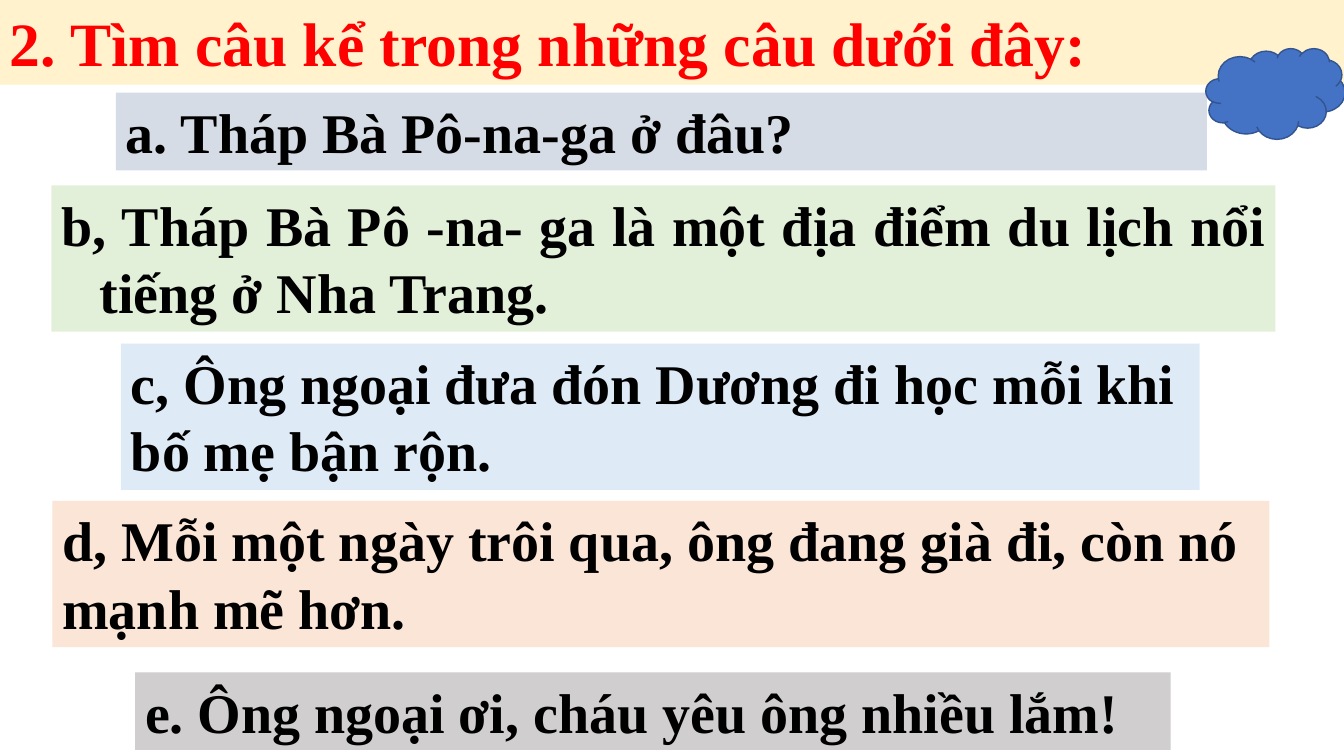
from pptx import Presentation
from pptx.dml.color import RGBColor
from pptx.enum.shapes import MSO_SHAPE
from pptx.enum.text import MSO_AUTO_SIZE, PP_ALIGN
from pptx.util import Inches, Pt

BLACK = RGBColor(0x00, 0x00, 0x00)
RED = RGBColor(0xFF, 0x00, 0x00)
CREAM = RGBColor(0xFF, 0xF2, 0xCC)
BLUE_GREY = RGBColor(0xD6, 0xDC, 0xE5)
PALE_GREEN = RGBColor(0xE2, 0xF0, 0xD9)
PALE_BLUE = RGBColor(0xDE, 0xEB, 0xF7)
PEACH = RGBColor(0xFB, 0xE5, 0xD6)
GREY = RGBColor(0xD0, 0xCE, 0xCE)
CLOUD_BLUE = RGBColor(0x44, 0x72, 0xC4)
CLOUD_EDGE = RGBColor(0x32, 0x54, 0x91)


class ExerciseSlide:
    font_name = "Times New Roman"
    hanging_indent = Inches(0.38)

    def __init__(self, slide):
        self.slide = slide

    def banner(self, text, box, fill, hanging=True, size=40, color=BLACK):
        """Add a filled band of bold text, justified when it hangs."""
        band = self.slide.shapes.add_textbox(*map(Inches, box))
        band.fill.solid()
        band.fill.fore_color.rgb = fill
        frame = band.text_frame
        frame.word_wrap = True
        frame.auto_size = MSO_AUTO_SIZE.SHAPE_TO_FIT_TEXT
        frame.text = text
        paragraph = frame.paragraphs[0]
        if hanging:
            paragraph.alignment = PP_ALIGN.JUSTIFY
            properties = paragraph._p.get_or_add_pPr()
            properties.set("marL", str(self.hanging_indent))
            properties.set("indent", str(-self.hanging_indent))
        font = paragraph.runs[0].font
        font.name = self.font_name
        font.size = Pt(size)
        font.bold = True
        font.color.rgb = color

    def cloud(self, box):
        cloud = self.slide.shapes.add_shape(MSO_SHAPE.CLOUD, *map(Inches, box))
        cloud.shadow.inherit = False
        cloud.fill.solid()
        cloud.fill.fore_color.rgb = CLOUD_BLUE
        cloud.line.color.rgb = CLOUD_EDGE
        cloud.line.width = Pt(1)


def main():
    prs = Presentation()
    prs.slide_width, prs.slide_height = Inches(13.33), Inches(7.5)
    exercise = ExerciseSlide(prs.slides.add_slide(prs.slide_layouts[6]))

    # Question
    exercise.banner("2. Tìm câu kể trong những câu dưới đây:",
                    (0, 0, 13.33, 0.84), CREAM, size=44, color=RED)

    # Sentences to choose from: text, box, fill, hanging indent
    sentences = [
        ("a. Tháp Bà Pô-na-ga ở đâu?",
         (1.15, 0.92, 10.82, 0.77), BLUE_GREY, True),
        ("b, Tháp Bà Pô -na- ga là một địa điểm du lịch nổi tiếng ở Nha Trang.",
         (0.51, 1.84, 12.14, 1.45), PALE_GREEN, True),
        ("c, Ông ngoại đưa đón Dương đi học mỗi khi bố mẹ bận rộn.",
         (1.2, 3.41, 10.7, 1.45), PALE_BLUE, False),
        ("d, Mỗi một ngày trôi qua, ông đang già đi, còn nó mạnh mẽ hơn.",
         (0.52, 4.97, 12.07, 1.45), PEACH, False),
        ("e. Ông ngoại ơi, cháu yêu ông nhiều lắm!",
         (1.34, 6.67, 10.27, 0.77), GREY, True),
    ]
    for sentence in sentences:
        exercise.banner(*sentence)

    # Decoration
    exercise.cloud((11.96, 0.48, 1.38, 0.9))

    prs.save("out.pptx")


if __name__ == "__main__":
    main()
